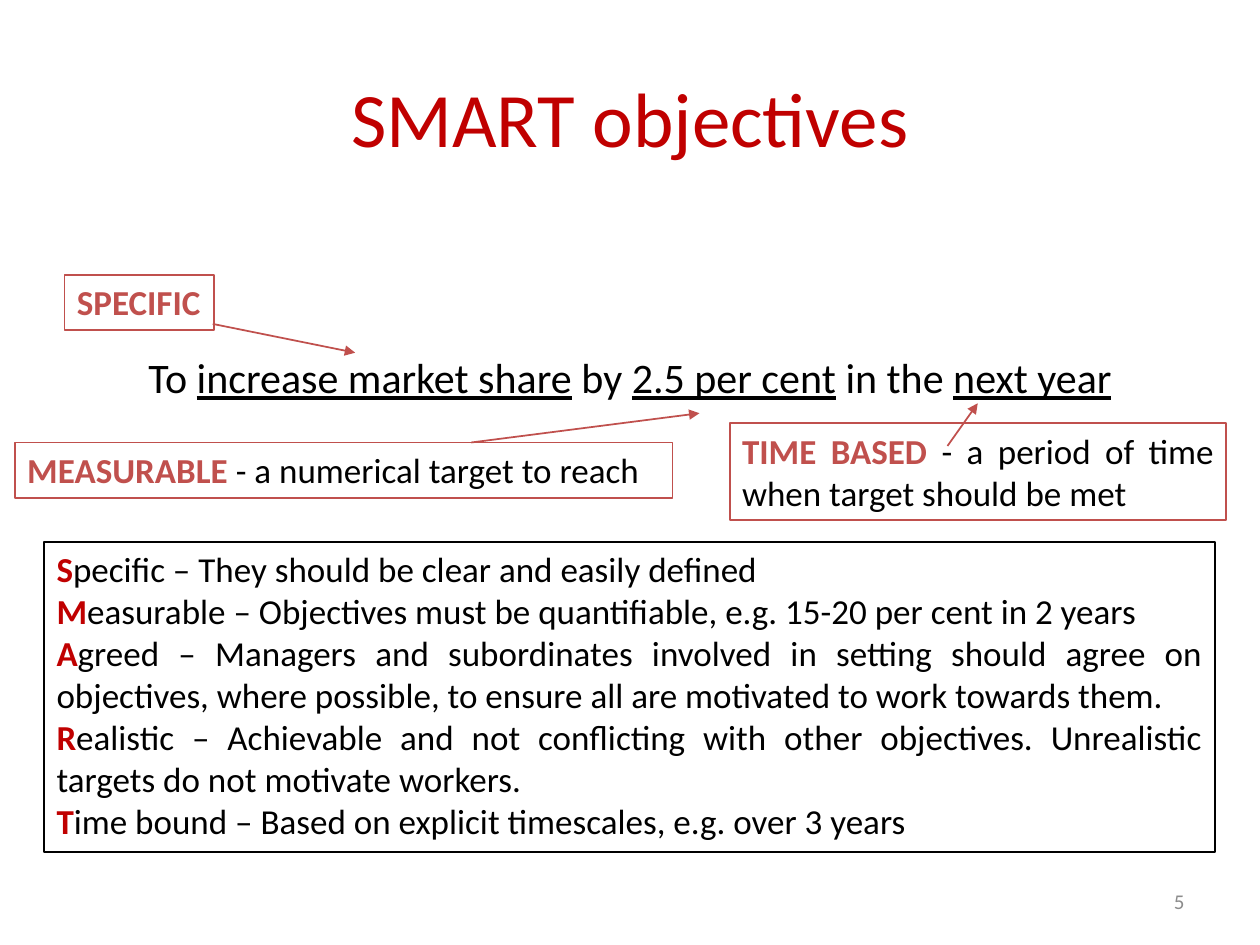
from lxml import etree
from pptx import Presentation
from pptx import util as u
from pptx.dml.color import RGBColor
from pptx.enum import shapes, text
from pptx.oxml.ns import qn

COLORS = {"title": "C00000", "accent": "C0504D", "ink": "000000",
          "paper": "FFFFFF", "muted": "8C8C8C"}
FONT = "Calibri"
ALIGN = text.PP_ALIGN
ANCHOR = text.MSO_ANCHOR

CALLOUTS = [
    ((0.3, 8.92, 13.26, 1.12), "MEASURABLE ", "- a numerical target to reach",
     (9.2, 0), (13.8, -0.59)),
    ((14.71, 8.53, 10.01, 1.96), "TIME BASED ",
     "- a period of time when target should be met", (4.39, 0.46), (5, -0.4)),
    ((1.3, 5.54, 3.02, 1.12), "SPECIFIC", "", (2.99, 0.99), (5.86, 1.57)),
]
SENTENCE = [("To ", False), ("increase market share", True), (" by ", False),
            ("2.5 per cent", True), (" in the ", False), ("next year", True)]
SUMMARY = [
    "Specific – They should be clear and easily defined",
    "Measurable – Objectives must be quantifiable, e.g. 15-20 per cent in 2 years",
    "Agreed – Managers and subordinates involved in setting should agree on "
    "objectives, where possible, to ensure all are motivated to work towards them.",
    "Realistic – Achievable and not conflicting with other objectives. "
    "Unrealistic targets do not motivate workers.",
    "Time bound – Based on explicit timescales, e.g. over 3 years",
]


def cm(values):
    """Convert a sequence of numbers to centimetre lengths."""
    return [u.Cm(v) for v in values]


def add_run(p, words, size, color, bold=False, underline=False):
    """Append one formatted run to a paragraph."""
    r = p.add_run()
    r.text = words
    r.font.name = FONT
    r.font.size = u.Pt(size)
    r.font.bold = bold
    r.font.underline = underline
    r.font.color.rgb = RGBColor.from_string(COLORS[color])


def add_title(s, box, words):
    """Place and format the title placeholder."""
    sp = s.shapes.title
    sp.left, sp.top, sp.width, sp.height = cm(box)
    sp.text_frame.vertical_anchor = ANCHOR.MIDDLE
    p = sp.text_frame.paragraphs[0]
    p.alignment = ALIGN.CENTER
    add_run(p, words, 44, "title")


def add_text(s, box, align, anchor):
    """Add a plain text box and return its first paragraph."""
    tf = s.shapes.add_textbox(*cm(box)).text_frame
    tf.word_wrap = True
    tf.vertical_anchor = anchor
    p = tf.paragraphs[0]
    p.alignment = align
    return p


def add_sentence(s, box):
    """Add the example objective with its key phrases underlined."""
    p = add_text(s, box, ALIGN.CENTER, ANCHOR.BOTTOM)
    for words, underline in SENTENCE:
        add_run(p, words, 24, "ink", underline=underline)


def add_panel(s, box, line, paragraphs, wrap=True):
    """Add an outlined box of justified (lead, rest, lead colour) paragraphs."""
    sp = s.shapes.add_shape(shapes.MSO_SHAPE.RECTANGLE, *cm(box))
    sp.shadow.inherit = False
    sp.fill.solid()
    sp.fill.fore_color.rgb = RGBColor.from_string(COLORS["paper"])
    sp.line.color.rgb = RGBColor.from_string(COLORS[line])
    sp.line.width = u.Pt(1)
    tf = sp.text_frame
    tf.word_wrap = wrap
    tf.vertical_anchor = ANCHOR.TOP
    for i, (lead, rest, color) in enumerate(paragraphs):
        p = tf.add_paragraph() if i else tf.paragraphs[0]
        p.alignment = ALIGN.JUSTIFY
        add_run(p, lead, 20, color, bold=True)
        if rest:
            add_run(p, rest, 20, "ink")


def add_arrow(s, start, end):
    """Add a thin arrow with a triangular head at its end."""
    line = s.shapes.add_connector(shapes.MSO_CONNECTOR.STRAIGHT, *cm(start + end))
    line.line.color.rgb = RGBColor.from_string(COLORS["accent"])
    line.line.width = u.Pt(1)
    etree.SubElement(line.line._get_or_add_ln(), qn("a:tailEnd"), type="triangle")
    etree.SubElement(line._element.spPr, qn("a:effectLst"))


def add_callout(s, box, lead, rest, start, end):
    """Add a labelled box and its arrow, given as offsets from the box corner."""
    x, y = box[:2]
    add_panel(s, box, "accent", [(lead, rest, "accent")], wrap=bool(rest))
    add_arrow(s, (x + start[0], y + start[1]), (x + end[0], y + end[1]))


def add_summary(s, box):
    """Add the list that spells out each letter of SMART."""
    add_panel(s, box, "ink", [(t[0], t[1:], "title") for t in SUMMARY])


def main():
    """Build the slide and save it."""
    prs = Presentation()
    prs.slide_width, prs.slide_height = cm((25.4, 19.05))
    s = prs.slides.add_slide(prs.slide_layouts[5])
    add_title(s, (1.27, 0.76, 22.86, 3.18), "SMART objectives")
    number = add_text(s, (18.21, 17.65, 5.92, 1.02), ALIGN.RIGHT, ANCHOR.MIDDLE)
    add_run(number, "5", 12, "muted")
    add_sentence(s, (1.27, 5.72, 22.86, 2.51))
    for callout in CALLOUTS:
        add_callout(s, *callout)
    add_summary(s, (0.89, 10.92, 23.6, 6.25))
    prs.save("out.pptx")


if __name__ == "__main__":
    main()
